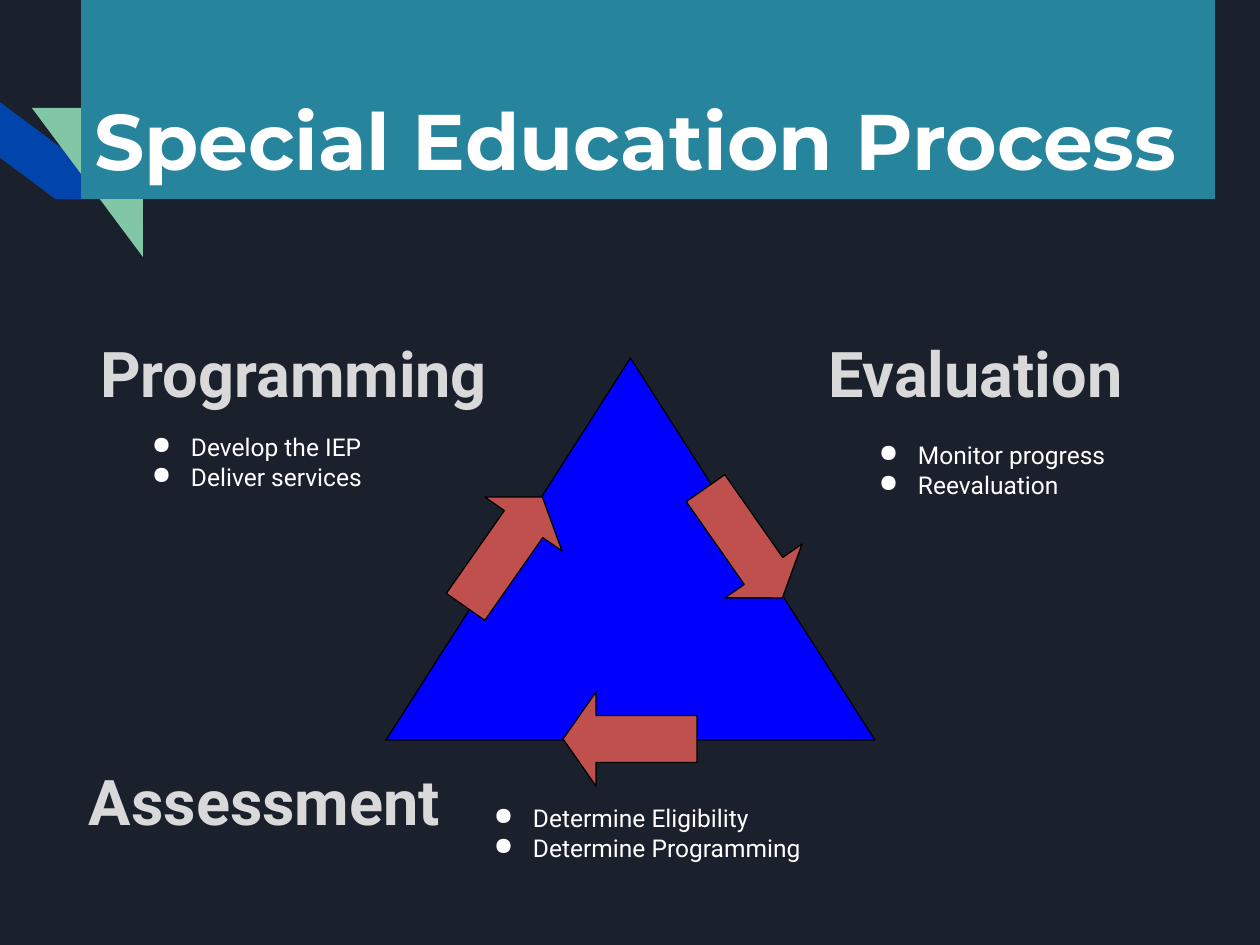
from dataclasses import dataclass

from lxml.etree import SubElement
from pptx import Presentation
from pptx.dml.color import RGBColor as Rgb
from pptx.enum.shapes import MSO_SHAPE as Kind
from pptx.enum.text import MSO_ANCHOR as Anchor, MSO_AUTO_SIZE as Fit, PP_ALIGN as Align
from pptx.oxml.ns import qn
from pptx.util import Emu, Pt

SCALE = 914400 / 126
WHITE, BLACK, GREY = "FFFFFF", "000000", "D9D9D9"
RED, BLUE, TEAL = "C0504D", "0000FF", "27849D"
INDENT = 39


@dataclass
class Box:
    x: int
    y: int
    w: int
    h: int


@dataclass
class Part:
    kind: Kind
    box: Box
    fill: str
    line: str = ""
    turn: int = 0
    flip: bool = False
    bend: tuple = ()


@dataclass
class Stage:
    name: str
    head: Box
    items: list
    body: Box


def px(n: int) -> Emu:
    return Emu(round(n * SCALE))


def place(box: Box) -> list:
    return [px(n) for n in (box.x, box.y, box.w, box.h)]


def paint(fill, tone: str) -> None:
    fill.solid()
    fill.fore_color.rgb = Rgb.from_string(tone)


def draw(slide, part: Part):
    shape = slide.shapes.add_shape(part.kind, *place(part.box))
    shape.shadow.inherit = False
    shape.rotation = part.turn
    for i, bend in enumerate(part.bend):
        shape.adjustments[i] = bend
    paint(shape.fill, part.fill)
    if part.line:
        paint(shape.line.fill, part.line)
        shape.line.width = Pt(0.75)
    else:
        shape.line.fill.background()
    if part.flip:
        shape.element.spPr.find(qn("a:xfrm")).set("flipH", "1")
    return shape


def add_dot(para, tone: str) -> None:
    props = para._p.get_or_add_pPr()
    props.set("marL", str(px(INDENT)))
    props.set("indent", str(-px(INDENT)))
    ink = SubElement(props, qn("a:buClr"))
    SubElement(ink, qn("a:srgbClr"), val=tone)
    SubElement(props, qn("a:buChar"), char="●")


def write(shape, lines: list, *, size: int, tone: str = WHITE, font: str = "Roboto",
          bold: bool = False, dots: bool = False, inset: int = 5,
          anchor: Anchor = Anchor.MIDDLE) -> None:
    frame = shape.text_frame
    frame.text = "\n".join(lines)
    frame.word_wrap = True
    frame.auto_size = Fit.NONE
    frame.vertical_anchor = anchor
    frame.margin_left = frame.margin_right = px(inset)
    frame.margin_top = frame.margin_bottom = px(inset)
    for para in frame.paragraphs:
        para.alignment = Align.LEFT
        if dots:
            add_dot(para, tone)
        for run in para.runs:
            run.font.name = font
            run.font.size = Pt(size)
            run.font.bold = bold
            run.font.color.rgb = Rgb.from_string(tone)


def add_stage(slide, stage: Stage) -> None:
    head = slide.shapes.add_textbox(*place(stage.head))
    write(head, [stage.name], size=36, tone=GREY, bold=True)
    body = slide.shapes.add_textbox(*place(stage.body))
    write(body, stage.items, size=14, dots=True)


def add_title(slide, text: str, box: Box):
    title = slide.shapes.title
    title.left, title.top, title.width, title.height = place(box)
    paint(title.fill, TEAL)
    write(title, [text], size=45, font="Montserrat", bold=True, inset=13, anchor=Anchor.BOTTOM)
    return title


def arrow(x: int, y: int, turn: int) -> Part:
    return Part(Kind.DOWN_ARROW, Box(x, y, 94, 134), RED, BLACK, turn, bend=(0.5, 0.35))


STRIPES = [
    Part(Kind.DIAGONAL_STRIPE, Box(0, 69, 111, 149), "0145AC", turn=270, bend=(0.5,)),
    Part(Kind.DIAGONAL_STRIPE, Box(32, 108, 111, 149), "82C7A5", flip=True, bend=(0.5,)),
]
CORE = Part(Kind.ISOSCELES_TRIANGLE, Box(386, 358, 489, 382), BLUE, BLACK)
STAGES = [
    Stage("Programming", Box(95, 329, 423, 86),
          ["Develop the IEP", "Deliver services"], Box(147, 427, 260, 69)),
    Stage("Evaluation", Box(823, 329, 331, 86),
          ["Monitor progress", "Reevaluation"], Box(874, 435, 237, 69)),
    Stage("Assessment", Box(84, 757, 384, 86),
          ["Determine Eligibility", "Determine Programming"], Box(489, 798, 318, 69)),
]
ARROWS = [arrow(457, 485, 215), arrow(697, 476, 325), arrow(583, 672, 90)]


def main() -> None:
    deck = Presentation()
    deck.slide_width, deck.slide_height = px(1260), px(945)
    slide = deck.slides.add_slide(deck.slide_layouts[5])
    paint(slide.background.fill, "1B212C")
    title = add_title(slide, "Special Education Process", Box(81, 0, 1134, 199))
    for stripe in STRIPES:
        title.element.addprevious(draw(slide, stripe).element)
    draw(slide, CORE)
    for stage in STAGES:
        add_stage(slide, stage)
    for part in ARROWS:
        draw(slide, part)
    deck.save("out.pptx")


if __name__ == "__main__":
    main()
